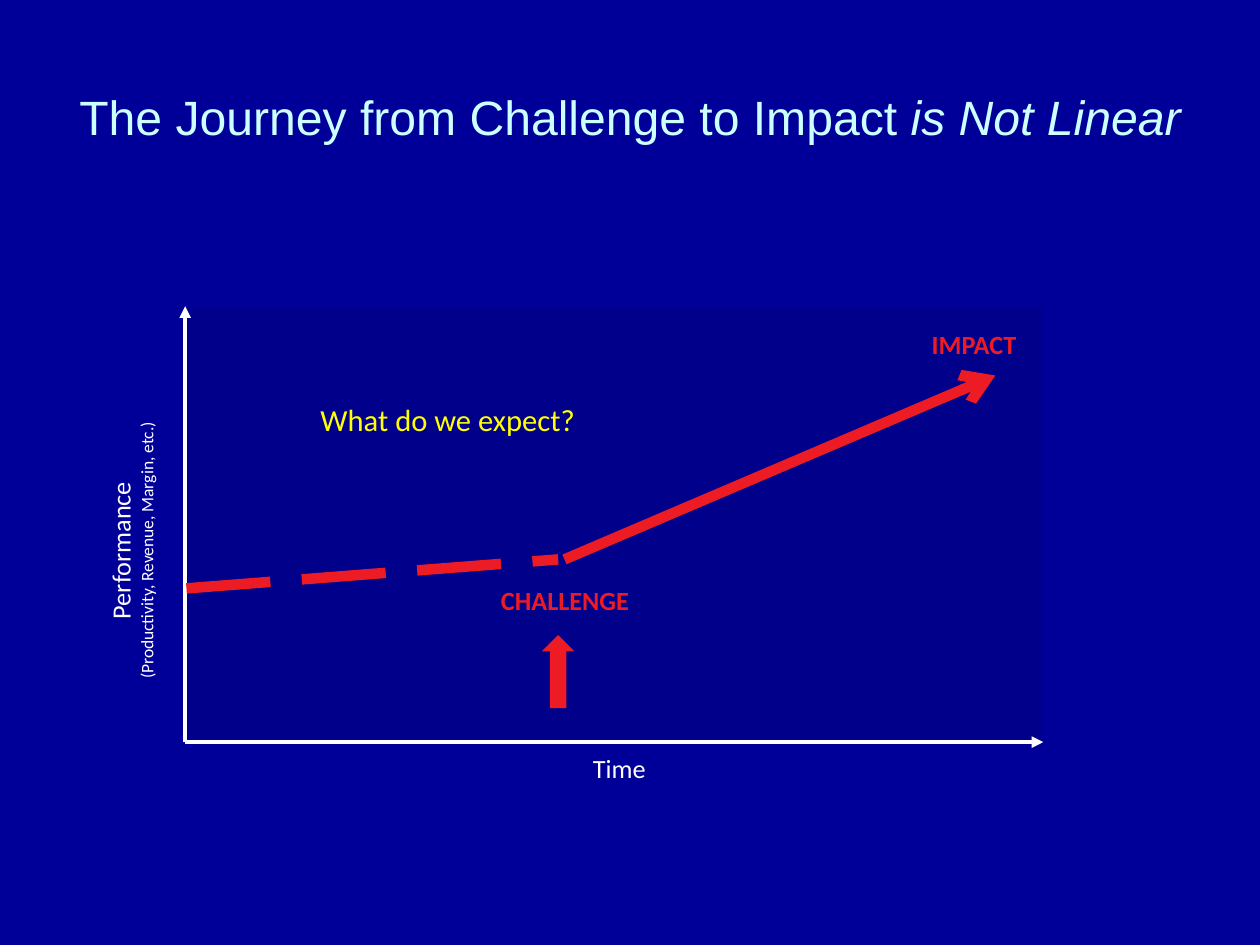
from lxml.etree import SubElement
from pptx import Presentation
from pptx.dml.color import RGBColor
from pptx.enum.dml import MSO_LINE
from pptx.enum.shapes import MSO_CONNECTOR, MSO_SHAPE
from pptx.enum.text import MSO_ANCHOR, PP_ALIGN
from pptx.oxml.ns import qn
from pptx.util import Inches, Pt

NAVY = RGBColor(0x00, 0x00, 0x99)
DEEP = RGBColor(0x00, 0x00, 0x82)
WHITE = RGBColor(0xFF, 0xFF, 0xFF)
CYAN = RGBColor(0xCC, 0xFF, 0xFF)
RED = RGBColor(0xED, 0x1C, 0x24)
YELLOW = RGBColor(0xFF, 0xFF, 0x00)

deck = Presentation()
deck.slide_width, deck.slide_height = Inches(10), Inches(7.5)
slide = deck.slides.add_slide(deck.slide_layouts[5])
slide.background.fill.solid()
slide.background.fill.fore_color.rgb = NAVY
shapes = slide.shapes


def add_run(para, text, size, color, font="Calibri", bold=False, italic=False):
    run = para.add_run()
    run.text = text
    run.font.name, run.font.size = font, Pt(size)
    run.font.bold, run.font.italic = bold, italic
    run.font.color.rgb = color


def add_line(start, end, color, width, tip=None, dash=None):
    ends = [Inches(v) for v in (*start, *end)]
    line = shapes.add_connector(MSO_CONNECTOR.STRAIGHT, *ends)
    line.line.color.rgb = color
    line.line.width = Pt(width)
    if dash:
        line.line.dash_style = dash
    if tip:
        SubElement(line.line._get_or_add_ln(), qn("a:tailEnd"), type=tip)
    SubElement(line._element.spPr, qn("a:effectLst"))


# Title
title = shapes.title
title.left, title.top = Inches(0.5), Inches(0.3)
title.width, title.height = Inches(9), Inches(1.25)
title.text_frame.vertical_anchor = MSO_ANCHOR.MIDDLE
para = title.text_frame.paragraphs[0]
para.alignment = PP_ALIGN.CENTER
add_run(para, "The Journey from Challenge to Impact ", 27.5, CYAN, "Arial")
add_run(para, "is Not Linear", 27.5, CYAN, "Arial", italic=True)

# Plot area and challenge arrow
for kind, box, color in (
    (MSO_SHAPE.RECTANGLE, (1.46, 2.44, 6.81, 3.44), DEEP),
    (MSO_SHAPE.UP_ARROW, (4.3, 5.04, 0.26, 0.58), RED),
):
    shape = shapes.add_shape(kind, *[Inches(v) for v in box])
    shape.shadow.inherit = False
    shape.fill.solid()
    shape.fill.fore_color.rgb = color
    shape.line.fill.background()
    if color == DEEP:
        tint = shape._element.spPr.find(".//" + qn("a:srgbClr"))
        SubElement(tint, qn("a:alpha"), val="64000")

# Axes
origin = (1.47, 5.89)
for end in ((1.47, 2.43), (8.28, 5.89)):
    add_line(origin, end, WHITE, 2.25, tip="triangle")

# Expected path
add_line((1.48, 4.67), (4.43, 4.44), RED, 6, dash=MSO_LINE.LONG_DASH)
add_line((4.48, 4.44), (7.9, 2.98), RED, 6, tip="arrow")

# Labels: box, turn, bold, color, lines of text and size
labels = (
    ((4.59, 5.92, 0.65, 0.35), 0, False, WHITE, [("Time", 15)]),
    ((-0.12, 4.11, 2.32, 0.52), 270, False, WHITE,
     [("Performance", 15), ("(Productivity, Revenue, Margin, etc.)", 10)]),
    ((3.8, 4.59, 1.37, 0.35), 0, True, RED, [("CHALLENGE", 15)]),
    ((7.27, 2.56, 0.92, 0.35), 0, True, RED, [("IMPACT", 15)]),
    ((2.11, 3.18, 2.89, 0.49), 0, False, YELLOW, [("What do we expect?", 17.5)]),
)
for box, turn, bold, color, lines in labels:
    label = shapes.add_textbox(*[Inches(v) for v in box])
    label.rotation = turn
    frame = label.text_frame
    frame.word_wrap = color == YELLOW
    if color == YELLOW:
        frame.margin_left = frame.margin_right = 0
        frame.margin_top = frame.margin_bottom = 0
    for i, (text, size) in enumerate(lines):
        para = frame.add_paragraph() if i else frame.paragraphs[0]
        para.alignment = PP_ALIGN.CENTER
        add_run(para, text, size, color, bold=bold)

deck.save("out.pptx")
